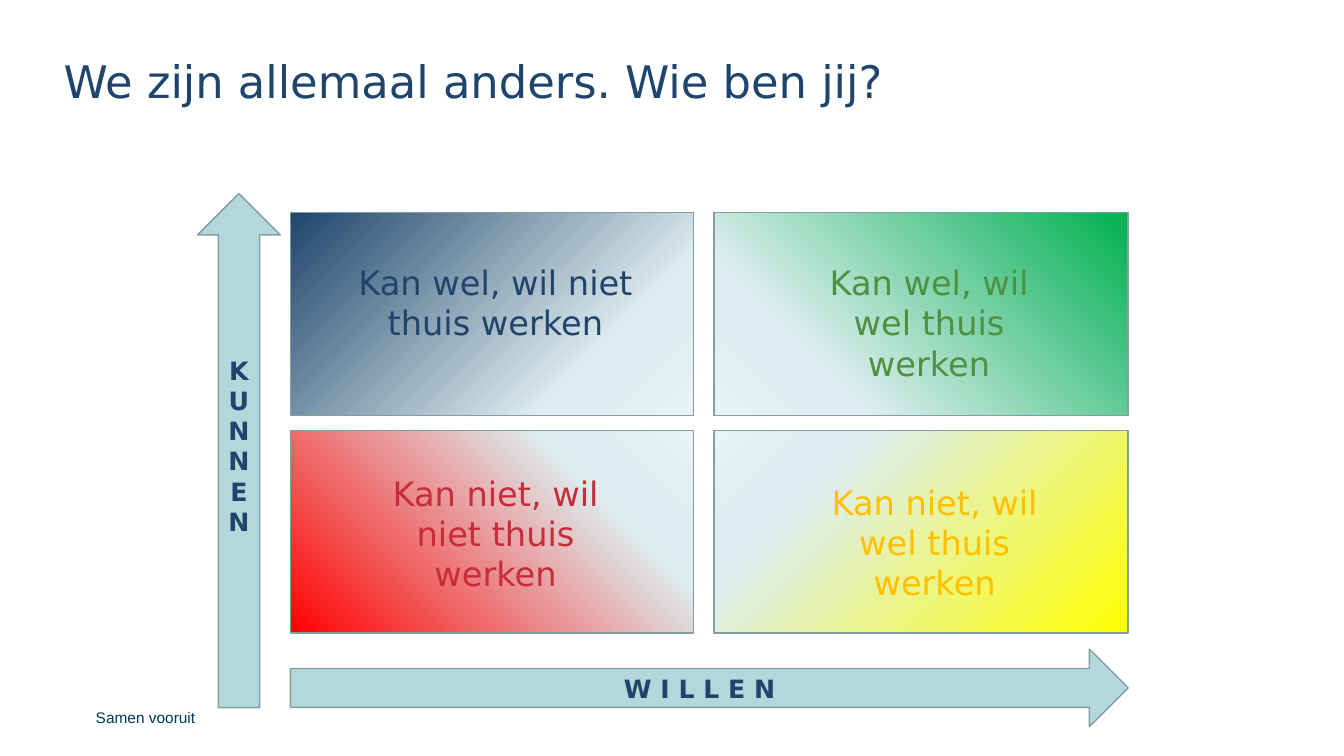
from lxml import etree
from pptx import Presentation
from pptx.dml.color import RGBColor
from pptx.enum.shapes import MSO_SHAPE
from pptx.enum.text import MSO_ANCHOR, PP_ALIGN
from pptx.oxml.ns import qn
from pptx.util import Inches, Pt

HUES = {
    "back": "FEFFFF", "navy": "20446B", "foot": "003859", "edge": "849FA2",
    "arrow": "B3D7DB", "pale": "DDEDEF", "light": "E8F3F4",
    "lime": "00B050", "red": "FF0000", "yellow": "FFFF00",
    "green": "4E9140", "gold": "FFC000", "crimson": "C62C3A",
}
SANS = "DejaVu Sans"

deck = Presentation()
deck.slide_width, deck.slide_height = Inches(13.33), Inches(7.5)
slide = deck.slides.add_slide(deck.slide_layouts[6])
slide.background.fill.solid()
slide.background.fill.fore_color.rgb = RGBColor.from_string(HUES["back"])


def write(frame, text, size, hue, font=SANS, bold=False, align=PP_ALIGN.CENTER):
    frame.word_wrap = True
    para = frame.paragraphs[0]
    para.text, para.alignment = text, align
    para.font.size, para.font.name, para.font.bold = Pt(size), font, bold
    para.font.color.rgb = RGBColor.from_string(HUES[hue])
    return para


def draw(kind, *box):
    shape = slide.shapes.add_shape(kind, *map(Inches, box))
    shape.shadow.inherit = False
    shape.line.color.rgb = RGBColor.from_string(HUES["edge"])
    shape.line.width = Pt(1)
    return shape


# Title and footer
for text, box, size, hue, font, gap in [
    ("We zijn allemaal anders. Wie ben jij?", (0.63, 0.59, 12.12, 1.05), 32, "navy", SANS, 0.9),
    ("Samen vooruit", (0.95, 7.02, 6.76, 0.19), 11, "foot", "Arial", 1.0),
]:
    frame = slide.shapes.add_textbox(*map(Inches, box)).text_frame
    frame.margin_left = frame.margin_right = frame.margin_top = frame.margin_bottom = 0
    write(frame, text, size, hue, font, align=PP_ALIGN.LEFT).line_spacing = gap

# Quadrants: each fades from its outer corner to the centre
COLS = [(2.88, 4.0), (7.08, 4.11)]
ROWS, TALL = [2.11, 4.27], 2.01
QUADS = [
    (0, 0, "navy", 45), (1, 0, "lime", 135),
    (0, 1, "red", 315), (1, 1, "yellow", 225),
]
for col, row, hue, angle in QUADS:
    left, wide = COLS[col]
    quad = draw(MSO_SHAPE.RECTANGLE, left, ROWS[row], wide, TALL)
    quad.fill.gradient()
    grad = quad.fill._xPr.find(qn("a:gradFill"))
    stops = grad.find(qn("a:gsLst"))
    for old in list(stops):
        stops.remove(old)
    for place, name in [(0, hue), (74, "pale"), (83, "pale"), (100, "light")]:
        stop = etree.SubElement(stops, qn("a:gs"), pos=str(place * 1000))
        etree.SubElement(stop, qn("a:srgbClr"), val=HUES[name])
    grad.find(qn("a:lin")).set("ang", str(angle * 60000))

# Axis arrows
wide = COLS[1][0] + COLS[1][1] - COLS[0][0]
AXES = [
    (MSO_SHAPE.RIGHT_ARROW, (COLS[0][0], 6.44, wide, 0.77), "W I L L E N", 0.05),
    (MSO_SHAPE.UP_ARROW, (1.96, 1.92, 0.82, 5.1), "K U N N E N", 0.35),
]
for kind, box, text, foot in AXES:
    axis = draw(kind, *box)
    axis.fill.solid()
    axis.fill.fore_color.rgb = RGBColor.from_string(HUES["arrow"])
    frame = axis.text_frame
    frame.vertical_anchor = MSO_ANCHOR.MIDDLE
    frame.margin_bottom = Inches(foot)
    write(frame, text, 18, "navy", bold=True)

# Quadrant labels
LABELS = [
    ("Kan wel, wil niet thuis werken", "navy", 3.45, 2.55, 2.93),
    ("Kan wel, wil wel thuis werken", "green", 7.98, 2.55, 2.47),
    ("Kan niet, wil wel thuis werken", "gold", 7.98, 4.73, 2.58),
    ("Kan niet, wil niet thuis werken", "crimson", 3.62, 4.64, 2.59),
]
for text, hue, left, top, wide in LABELS:
    label = slide.shapes.add_textbox(*map(Inches, (left, top, wide, 1.31)))
    write(label.text_frame, text, 24, hue)

deck.save("out.pptx")
